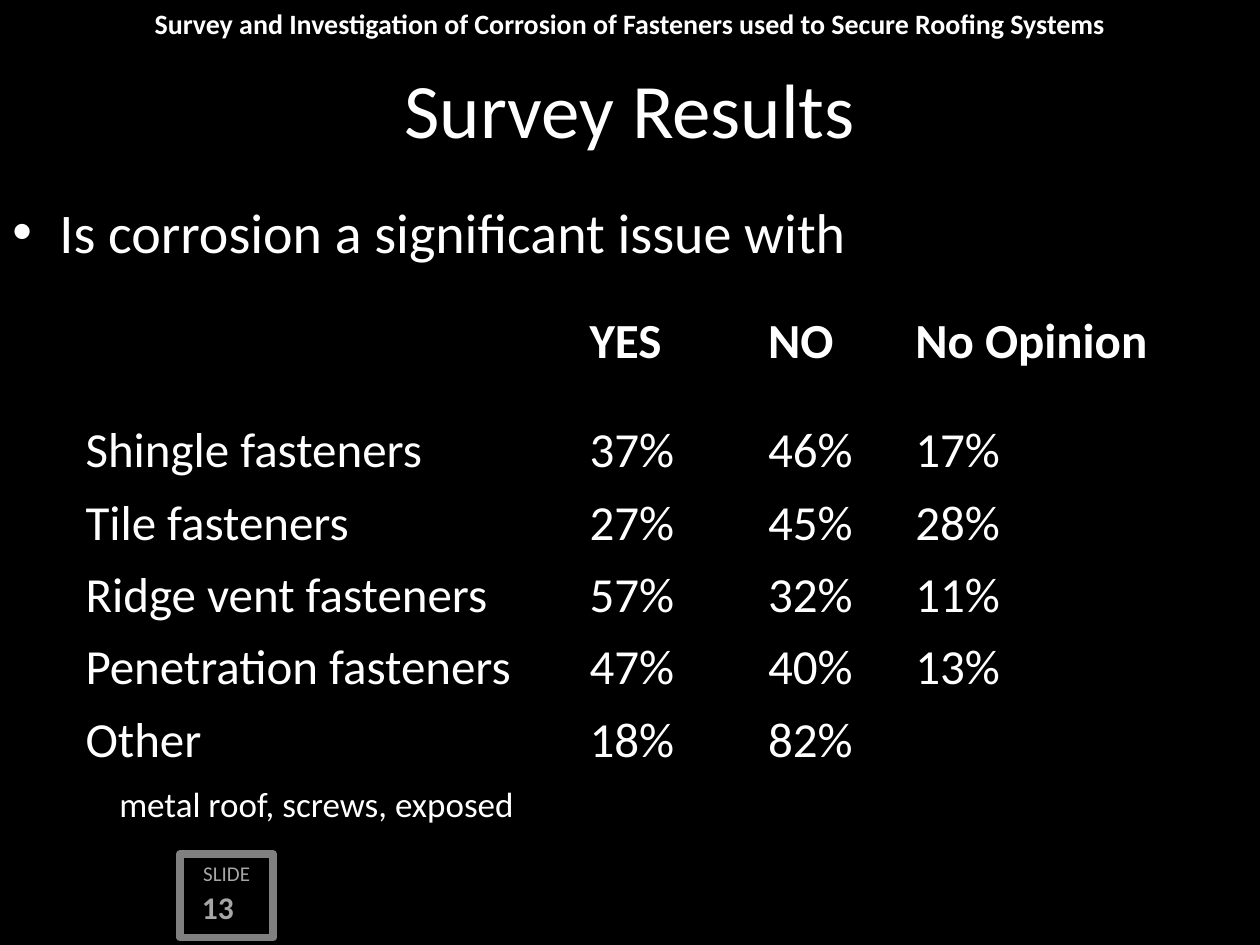
from lxml import etree
from pptx import Presentation
from pptx.dml.color import RGBColor
from pptx.enum.shapes import MSO_SHAPE as Shape
from pptx.enum.text import MSO_ANCHOR as Anchor, PP_ALIGN as Align
from pptx.oxml.ns import qn
from pptx.util import Cm, Pt

WHITE, BLACK, GREY, SILVER = "FFFFFF", "000000", "808080", "A6A6A6"
NO_STYLE_NO_GRID = "{2D5ABB26-0587-4C30-8999-92F81FD0307C}"


def paint(color_format, color):
    color_format.rgb = RGBColor.from_string(color)


def write(para, text, size, color=WHITE, bold=False, align=Align.LEFT):
    para.text = text
    para.alignment = align
    para.font.name = "Calibri"
    para.font.size = Pt(size)
    para.font.bold = bold
    paint(para.font.color, color)


deck = Presentation()
deck.slide_width, deck.slide_height = Cm(25.4), Cm(19.05)
page = deck.slides.add_slide(deck.slide_layouts[5])
page.background.fill.solid()
paint(page.background.fill.fore_color, BLACK)

badge = page.shapes.add_shape(Shape.RECTANGLE, Cm(3.63), Cm(17.22), Cm(1.88), Cm(1.68))
badge.shadow.inherit = False
badge.fill.solid()
paint(badge.fill.fore_color, BLACK)
paint(badge.line.color, GREY)
badge.line.width = Pt(4.5)
badge.text_frame.vertical_anchor = Anchor.TOP
write(badge.text_frame.paragraphs[0], "SLIDE", 12, SILVER, align=Align.CENTER)

number = page.shapes.add_textbox(Cm(3.52), Cm(17.78), Cm(1.75), Cm(1.09))
number.text_frame.word_wrap = True
write(number.text_frame.paragraphs[0], "13", 18, SILVER, True, Align.CENTER)

header = page.shapes.add_textbox(0, 0, Cm(25.4), Cm(0.76))
header.text_frame.word_wrap = True
write(header.text_frame.paragraphs[0],
      "Survey and Investigation of Corrosion of Fasteners used to Secure Roofing Systems",
      16, bold=True, align=Align.CENTER)

title = page.shapes.title
title.left, title.top, title.width, title.height = 0, Cm(0.84), Cm(25.4), Cm(2.67)
title.text_frame.vertical_anchor = Anchor.MIDDLE
write(title.text_frame.paragraphs[0], "Survey Results", 44, align=Align.CENTER)

question = page.shapes.add_textbox(0, Cm(3.85), Cm(25.4), Cm(1.8))
question.text_frame.word_wrap = True
para = question.text_frame.paragraphs[0]
properties = para._p.get_or_add_pPr()
properties.set("marL", str(Cm(0.95)))
properties.set("indent", str(-Cm(0.95)))
etree.SubElement(properties, qn("a:buFont")).set("typeface", "Arial")
etree.SubElement(properties, qn("a:buChar")).set("char", "•")
write(para, "Is corrosion a significant issue with", 32)

rows = [
    ("", "YES", "NO", "No Opinion"),
    ("Shingle fasteners", "37%", "46%", "17%"),
    ("Tile fasteners", "27%", "45%", "28%"),
    ("Ridge vent fasteners", "57%", "32%", "11%"),
    ("Penetration fasteners", "47%", "40%", "13%"),
    ("Other", "18%", "82%", ""),
]
widths = [10.16, 3.6, 2.97, 6.56]
heights = [2.21, 1.46, 1.46, 1.46, 1.46, 2.6]
frame = page.shapes.add_table(len(rows), len(widths), Cm(1.47), Cm(6.15),
                              Cm(sum(widths)), Cm(sum(heights)))
table = frame.table
table.first_row = table.horz_banding = False
table._tbl.tblPr.find(qn("a:tableStyleId")).text = NO_STYLE_NO_GRID
for column, width in zip(table.columns, widths):
    column.width = Cm(width)
for row, height, texts in zip(table.rows, heights, rows):
    row.height = Cm(height)
    for cell, text in zip(row.cells, texts):
        cell.fill.solid()
        paint(cell.fill.fore_color, BLACK)
        write(cell.text_frame.paragraphs[0], text, 28, bold=texts is rows[0])

remark = table.cell(5, 0).text_frame.add_paragraph()
remark._p.get_or_add_pPr().set("marL", str(Cm(0.68)))
remark.space_before = Pt(8)
write(remark, "metal roof, screws, exposed", 20)

deck.save("out.pptx")
